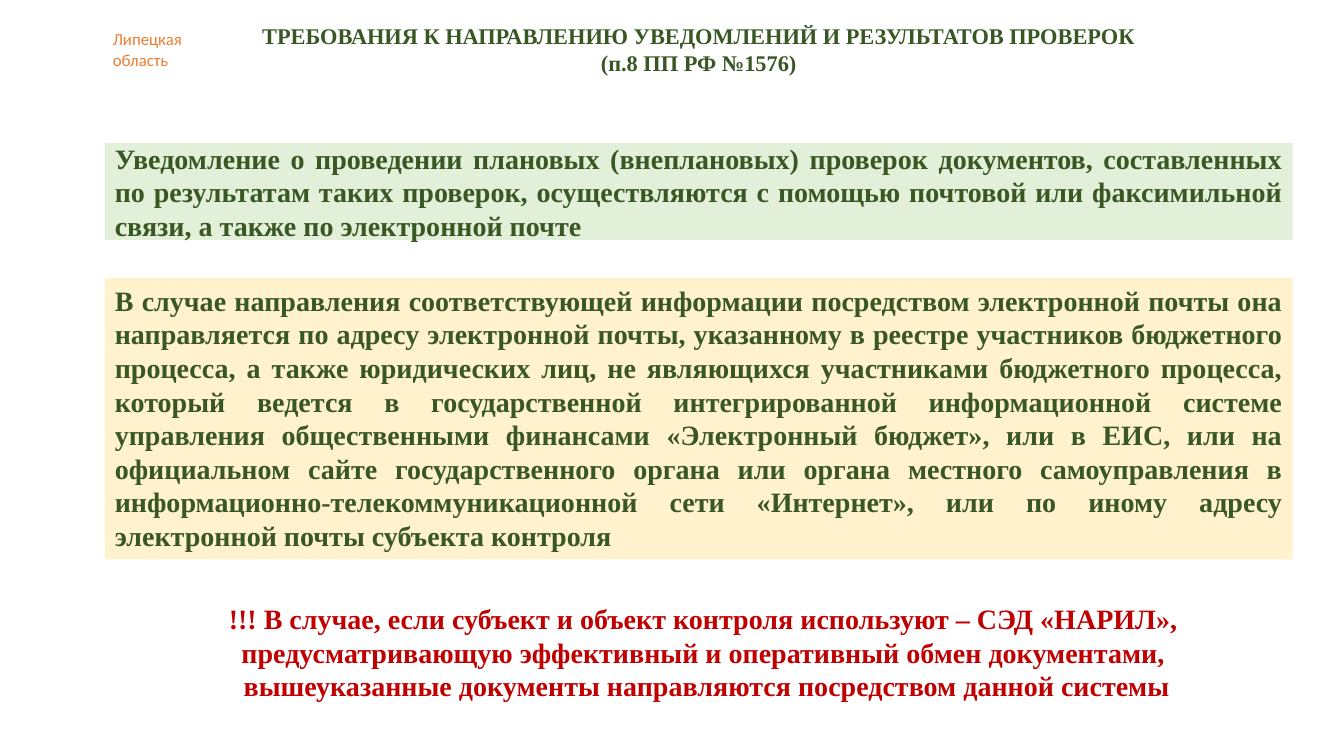
"""Build a slide on how inspection notices and results are sent."""
import pptx
import pptx.util
import pptx.dml.color
import pptx.enum.shapes
import pptx.enum.text

Inches = pptx.util.Inches
RGBColor = pptx.dml.color.RGBColor
ALIGN = pptx.enum.text.PP_ALIGN
ANCHOR = pptx.enum.text.MSO_ANCHOR

DARK_GREEN = RGBColor(0x38, 0x57, 0x23)
PALE_GREEN = RGBColor(0xE2, 0xF0, 0xD9)
PALE_YELLOW = RGBColor(0xFF, 0xF2, 0xCC)
ORANGE = RGBColor(0xED, 0x7D, 0x31)
RED = RGBColor(0xC0, 0x00, 0x00)
SERIF = "Times New Roman"

PANEL_LEFT, PANEL_WIDTH = 1.04, 11.78

REGION = "Липецкая\nобласть"
TITLE = (
    "ТРЕБОВАНИЯ К НАПРАВЛЕНИЮ УВЕДОМЛЕНИЙ И РЕЗУЛЬТАТОВ ПРОВЕРОК\n"
    "(п.8 ПП РФ №1576)"
)
NOTICE = (
    "Уведомление о проведении плановых (внеплановых) проверок документов, "
    "составленных по результатам таких проверок, осуществляются с помощью "
    "почтовой или факсимильной связи, а также по электронной почте"
)
EMAIL_RULE = (
    "В случае направления соответствующей информации посредством электронной "
    "почты она направляется по адресу электронной почты, указанному в реестре "
    "участников бюджетного процесса, а также юридических лиц, не являющихся "
    "участниками бюджетного процесса, который ведется в государственной "
    "интегрированной информационной системе управления общественными финансами "
    "«Электронный бюджет», или в ЕИС, или на официальном сайте государственного "
    "органа или органа местного самоуправления в "
    "информационно-телекоммуникационной сети «Интернет», или по иному адресу "
    "электронной почты субъекта контроля"
)
WARNING = (
    "!!! В случае, если субъект и объект контроля используют – СЭД «НАРИЛ», \n"
    "предусматривающую эффективный и оперативный обмен документами, \n"
    "вышеуказанные документы направляются посредством данной системы"
)


def write_text(shape, text, size, color, align, font=SERIF, bold=True, anchor=ANCHOR.TOP):
    """Fill a shape with uniformly formatted text."""
    frame = shape.text_frame
    frame.text = text
    frame.word_wrap = True
    frame.auto_size = pptx.enum.text.MSO_AUTO_SIZE.NONE
    frame.vertical_anchor = anchor
    for para in frame.paragraphs:
        para.alignment = align
        for span in para.runs:
            span.font.name = font
            span.font.size = pptx.util.Pt(size)
            span.font.bold = bold
            span.font.color.rgb = color


def place_title(page, text):
    """Move the title placeholder to the top and fill it."""
    title = page.shapes.title
    title.left, title.top = Inches(1.23), Inches(0.17)
    title.width, title.height = Inches(11.4), Inches(0.64)
    write_text(title, text, 16, DARK_GREEN, ALIGN.CENTER)


def add_label(page, left, top, width, height, text, size, color, align, **style):
    """Add a text box without fill."""
    box = page.shapes.add_textbox(Inches(left), Inches(top), Inches(width), Inches(height))
    write_text(box, text, size, color, align, **style)


def add_panel(page, top, height, fill, text, anchor):
    """Add a filled panel with justified text."""
    panel = page.shapes.add_shape(
        pptx.enum.shapes.MSO_SHAPE.RECTANGLE,
        Inches(PANEL_LEFT), Inches(top), Inches(PANEL_WIDTH), Inches(height),
    )
    panel.shadow.inherit = False
    panel.fill.solid()
    panel.fill.fore_color.rgb = fill
    panel.line.fill.background()
    write_text(panel, text, 20, DARK_GREEN, ALIGN.JUSTIFY, anchor=anchor)


def main():
    """Assemble and save the deck."""
    deck = pptx.Presentation()
    deck.slide_width, deck.slide_height = Inches(13.33), Inches(7.5)
    page = deck.slides.add_slide(deck.slide_layouts.get_by_name("Title Only"))
    place_title(page, TITLE)
    add_label(page, 1.02, 0.24, 0.91, 0.5, REGION, 12, ORANGE, ALIGN.LEFT,
              font="Calibri", bold=False)
    add_panel(page, 1.42, 0.96, PALE_GREEN, NOTICE, ANCHOR.MIDDLE)
    add_panel(page, 2.76, 2.79, PALE_YELLOW, EMAIL_RULE, ANCHOR.TOP)
    add_label(page, 1.12, 5.92, PANEL_WIDTH, 1.11, WARNING, 20, RED, ALIGN.CENTER)
    deck.save("out.pptx")


if __name__ == "__main__":
    main()
